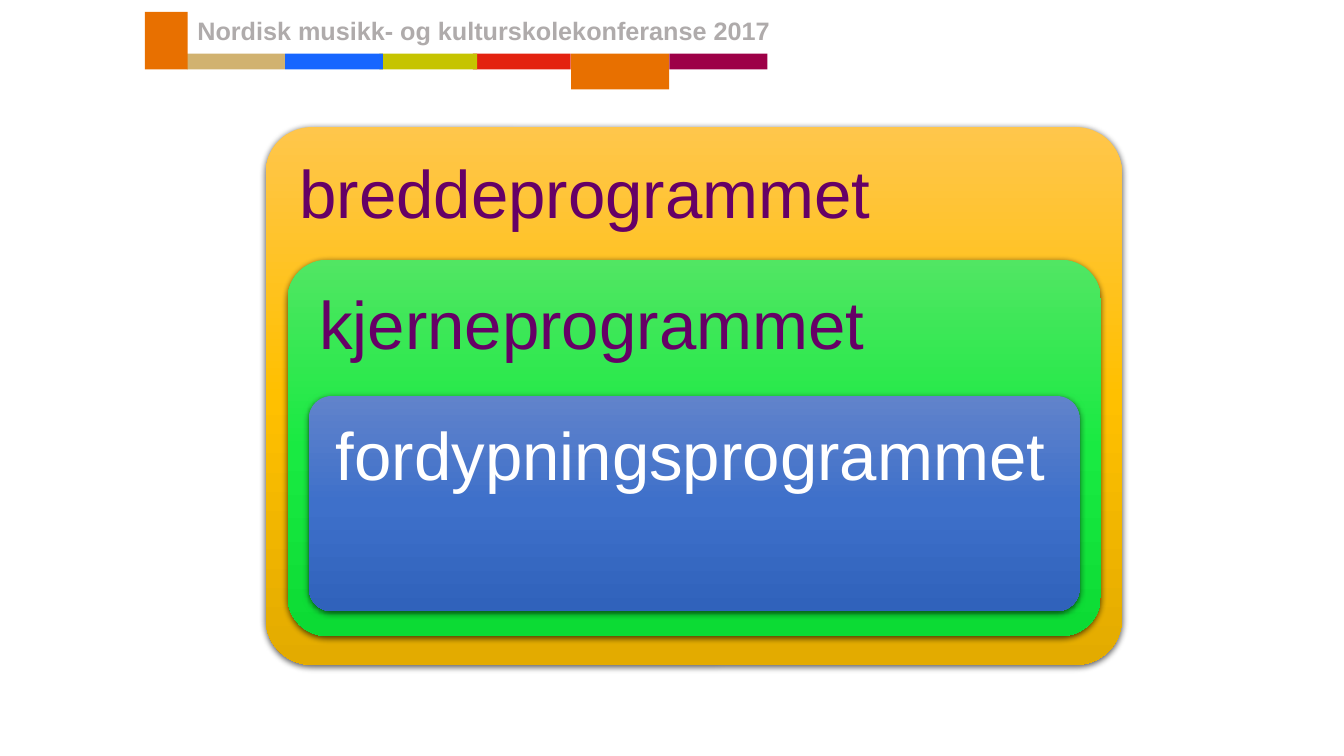
from copy import deepcopy

from lxml import etree
from pptx import Presentation
from pptx.dml.color import RGBColor
from pptx.enum.shapes import MSO_SHAPE
from pptx.enum.text import MSO_ANCHOR, PP_ALIGN
from pptx.oxml.ns import qn
from pptx.util import Pt

RECT = MSO_SHAPE.RECTANGLE
ROUNDED = MSO_SHAPE.ROUNDED_RECTANGLE
TOP = MSO_ANCHOR.TOP
LEFT = PP_ALIGN.LEFT

CONFERENCE = "Nordisk musikk- og kulturskolekonferanse 2017"
BAND_TOP, BAND_WIDTH, BAND_HEIGHT = 38.3, 70, 11.3
BANDS = [
    (337.7, BAND_HEIGHT, "E3220F"),
    (270.9, BAND_HEIGHT, "C6C400"),
    (408, 25.6, "E87000"),
    (478.2, BAND_HEIGHT, "9D0047"),
    (133.5, BAND_HEIGHT, "D1B270"),
    (203.6, BAND_HEIGHT, "1766FF"),
]
PROGRAMS = [
    ("breddeprogrammet", (189.9, 90.8, 611.5, 384), 0.085, "660066",
     ("FFC64B", "FFC000", "E3AB00")),
    ("kjerneprogrammet", (205.4, 185.5, 580.9, 268.8), 0.105, "660066",
     ("51E663", "19EA42", "0CDB34")),
    ("fordypningsprogrammet", (220.7, 282.9, 550.4, 153.6), 0.105, "FFFFFF",
     ("6183CB", "3E70CA", "3062BB")),
]


def rgb(value):
    return RGBColor.from_string(value)


def add_block(slide, kind, bounds):
    block = slide.shapes.add_shape(kind, *map(Pt, bounds))
    block.shadow.inherit = False
    block.line.fill.background()
    return block


def add_bar(slide, bounds, color):
    bar = add_block(slide, RECT, bounds)
    bar.fill.solid()
    bar.fill.fore_color.rgb = rgb(color)


def write(frame, text, *, size, color, bold=False, wrap=True, insets=(7.2, 3.6), spacing=1.0):
    frame.word_wrap = wrap
    frame.vertical_anchor = TOP
    frame.margin_left = frame.margin_right = Pt(insets[0])
    frame.margin_top = frame.margin_bottom = Pt(insets[1])
    line = frame.paragraphs[0]
    line.alignment = LEFT
    line.line_spacing = spacing
    run = line.add_run()
    run.text = text
    run.font.name = "Arial"
    run.font.size = Pt(size)
    run.font.bold = bold
    run.font.color.rgb = rgb(color)


def shade(block, colors):
    block.fill.gradient()
    block.fill.gradient_angle = 270
    first = block._element.spPr.find(".//" + qn("a:gs"))
    first.addnext(deepcopy(first))
    for index, (stop, color) in enumerate(zip(block.fill.gradient_stops, colors)):
        stop.position = index / (len(colors) - 1)
        stop.color.rgb = rgb(color)


def cast_shadow(block):
    effects = block._element.spPr.find(qn("a:effectLst"))
    shadow = etree.SubElement(
        effects, qn("a:outerShdw"), blurRad=str(Pt(4.5)), dist=str(Pt(1.5)),
        dir="5400000", algn="ctr", rotWithShape="0")
    black = etree.SubElement(shadow, qn("a:srgbClr"), val="000000")
    etree.SubElement(black, qn("a:alpha"), val="63000")


def main():
    deck = Presentation()
    deck.slide_width, deck.slide_height = Pt(960), Pt(540)
    slide = deck.slides.add_slide(deck.slide_layouts[6])

    for left, height, color in BANDS:
        add_bar(slide, (left, BAND_TOP, BAND_WIDTH, height), color)
    add_bar(slide, (103.5, 8.6, 30.5, 41), "E87000")

    header = slide.shapes.add_textbox(Pt(133.9), Pt(7.5), Pt(427.7), Pt(29))
    write(header.text_frame, CONFERENCE, size=18, color="AFABAB", bold=True, wrap=False)

    for name, bounds, corner, color, gradient in PROGRAMS:
        program = add_block(slide, ROUNDED, bounds)
        program.adjustments[0] = corner
        shade(program, gradient)
        cast_shadow(program)
        write(program.text_frame, name, size=48, color=color, insets=(14.4, 14.4), spacing=0.9)

    deck.save("out.pptx")


if __name__ == "__main__":
    main()
